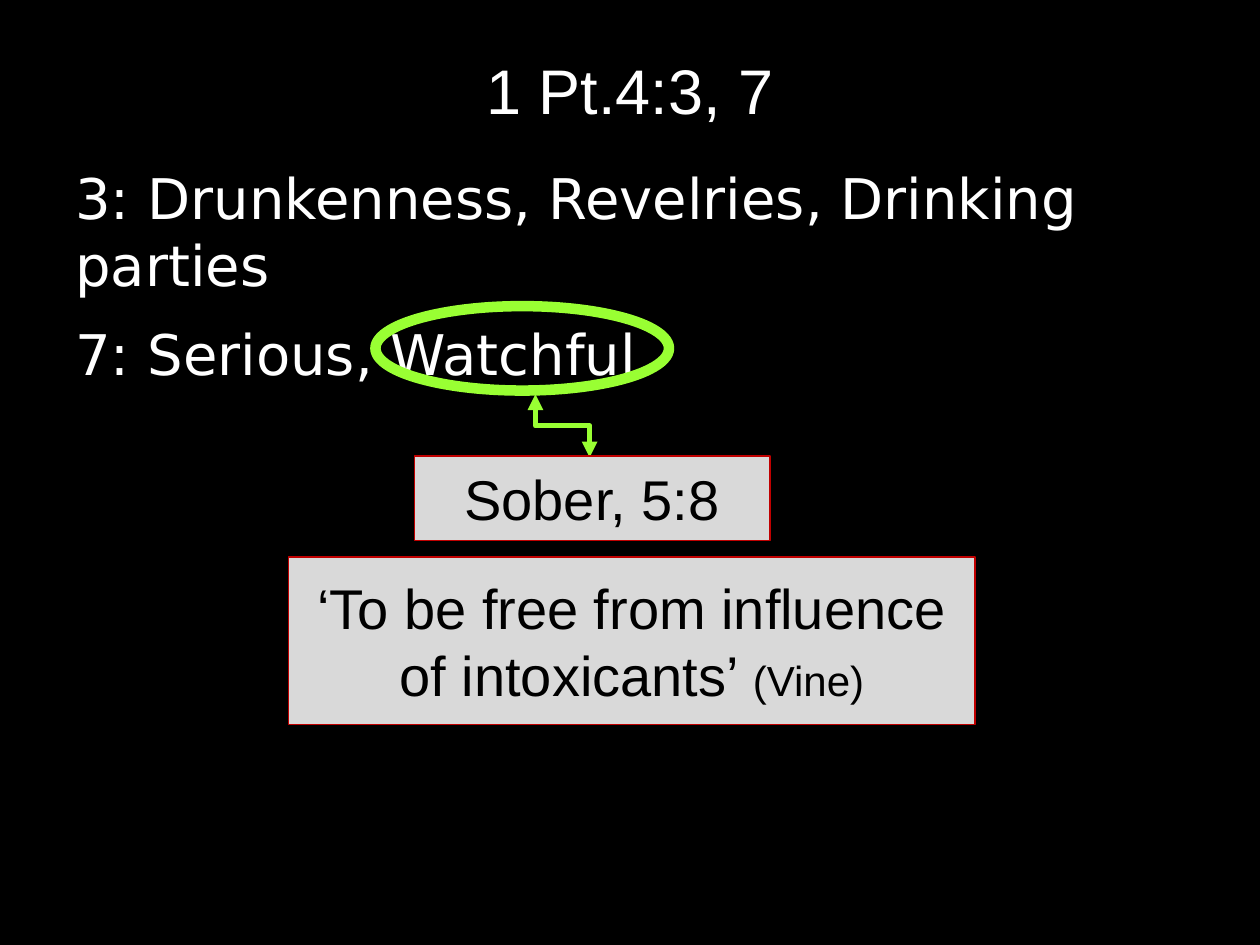
from dataclasses import dataclass

import pptx
import pptx.dml.color
import pptx.enum.shapes
import pptx.enum.text
import pptx.oxml
import pptx.oxml.ns
import pptx.util

Inches = pptx.util.Inches
Pt = pptx.util.Pt
Align = pptx.enum.text.PP_ALIGN
Anchor = pptx.enum.text.MSO_ANCHOR
Preset = pptx.enum.shapes.MSO_SHAPE


def rgb(value: str) -> pptx.dml.color.RGBColor:
    return pptx.dml.color.RGBColor.from_string(value)


@dataclass(frozen=True)
class Theme:
    background: str = "000000"
    light_text: str = "FFFFFF"
    dark_text: str = "000000"
    note_fill: str = "D9D9D9"
    note_line: str = "C00000"
    accent: str = "99FF33"
    heading_font: str = "Arial"
    body_font: str = "DejaVu Sans"
    title_size: int = 36
    text_size: int = 32
    source_size: int = 24


THEME = Theme()


@dataclass(frozen=True)
class Box:
    left: float
    top: float
    width: float
    height: float

    def lengths(self) -> list:
        return [Inches(v) for v in (self.left, self.top, self.width, self.height)]


@dataclass(frozen=True)
class Run:
    text: str
    size: int = THEME.text_size
    font: str = THEME.heading_font
    color: str = THEME.dark_text


@dataclass(frozen=True)
class Note:
    box: Box
    lines: list


NOTES = [
    Note(Box(3.29, 3.62, 2.82, 0.67), [[Run("Sober, 5:8")]]),
    Note(Box(2.29, 4.42, 5.45, 1.33), [
        [Run("‘To be free from influence")],
        [Run("of intoxicants’ "), Run("(Vine)", THEME.source_size)],
    ]),
]
VERSES = ["3: Drunkenness, Revelries, Drinking parties", "7: Serious, Watchful"]


def write_lines(paragraph, lines: list) -> None:
    """Write lists of runs into one paragraph, with a line break between lists."""
    for index, runs in enumerate(lines):
        if index:
            paragraph.add_line_break()
        for item in runs:
            run = paragraph.add_run()
            run.text = item.text
            formats = {"size": Pt(item.size), "name": item.font}
            for name, value in formats.items():
                setattr(run.font, name, value)
            run.font.color.rgb = rgb(item.color)


def add_text(slide, box: Box, anchor):
    frame = slide.shapes.add_textbox(*box.lengths()).text_frame
    frame.word_wrap = True
    frame.vertical_anchor = anchor
    return frame


def add_outlined(slide, preset, box: Box, color: str, weight: float):
    shape = slide.shapes.add_shape(preset, *box.lengths())
    shape.shadow.inherit = False
    shape.fill.background()
    shape.line.color.rgb = rgb(color)
    shape.line.width = Pt(weight)
    return shape


def add_note(slide, note: Note) -> None:
    shape = add_outlined(slide, Preset.RECTANGLE, note.box, THEME.note_line, 1)
    shape.fill.solid()
    shape.fill.fore_color.rgb = rgb(THEME.note_fill)
    frame = shape.text_frame
    frame.word_wrap = True
    frame.vertical_anchor = Anchor.MIDDLE
    frame.paragraphs[0].alignment = Align.CENTER
    write_lines(frame.paragraphs[0], note.lines)


def add_vertical_elbow(slide, start: tuple, end: tuple) -> None:
    """Draw a two-headed elbow that leaves and arrives vertically.

    The preset runs horizontally, so it is mirrored and turned by 270 degrees.
    """
    middle_x, middle_y = (start[0] + end[0]) / 2, (start[1] + end[1]) / 2
    half_length, half_breadth = (end[1] - start[1]) / 2, (end[0] - start[0]) / 2
    connector = slide.shapes.add_connector(
        pptx.enum.shapes.MSO_CONNECTOR.ELBOW,
        Inches(middle_x + half_length), Inches(middle_y - half_breadth),
        Inches(middle_x - half_length), Inches(middle_y + half_breadth))
    connector.line.color.rgb = rgb(THEME.accent)
    connector.line.width = Pt(3)
    properties = connector._element.spPr
    properties.find(pptx.oxml.ns.qn("a:xfrm")).set("rot", str(270 * 60000))
    line = connector.line._get_or_add_ln()
    namespace = pptx.oxml.ns.nsdecls("a")
    for tag in ("headEnd", "tailEnd"):
        line.append(pptx.oxml.parse_xml(f'<a:{tag} {namespace} type="triangle"/>'))
    properties.append(pptx.oxml.parse_xml(f"<a:effectLst {namespace}/>"))


def main() -> None:
    presentation = pptx.Presentation()
    presentation.slide_width, presentation.slide_height = Inches(10), Inches(7.5)
    slide = presentation.slides.add_slide(presentation.slide_layouts[6])
    slide.background.fill.solid()
    slide.background.fill.fore_color.rgb = rgb(THEME.background)

    title = add_text(slide, Box(0.5, 0.08, 9, 1.25), Anchor.MIDDLE).paragraphs[0]
    title.alignment = Align.CENTER
    write_lines(title, [[Run("1 Pt.4:3, 7", THEME.title_size, color=THEME.light_text)]])

    body = add_text(slide, Box(0.5, 1.25, 9, 5.67), Anchor.TOP)
    for index, verse in enumerate(VERSES):
        paragraph = body.add_paragraph() if index else body.paragraphs[0]
        paragraph.space_before = Pt(6 if index else 0)
        paragraph.space_after = Pt(6)
        write_lines(paragraph, [[Run(verse, font=THEME.body_font, color=THEME.light_text)]])

    add_outlined(slide, Preset.OVAL, Box(2.98, 2.43, 2.33, 0.67), THEME.accent, 6)
    add_vertical_elbow(slide, (4.25, 3.13), (4.68, 3.63))
    for note in NOTES:
        add_note(slide, note)
    presentation.save("out.pptx")


if __name__ == "__main__":
    main()
